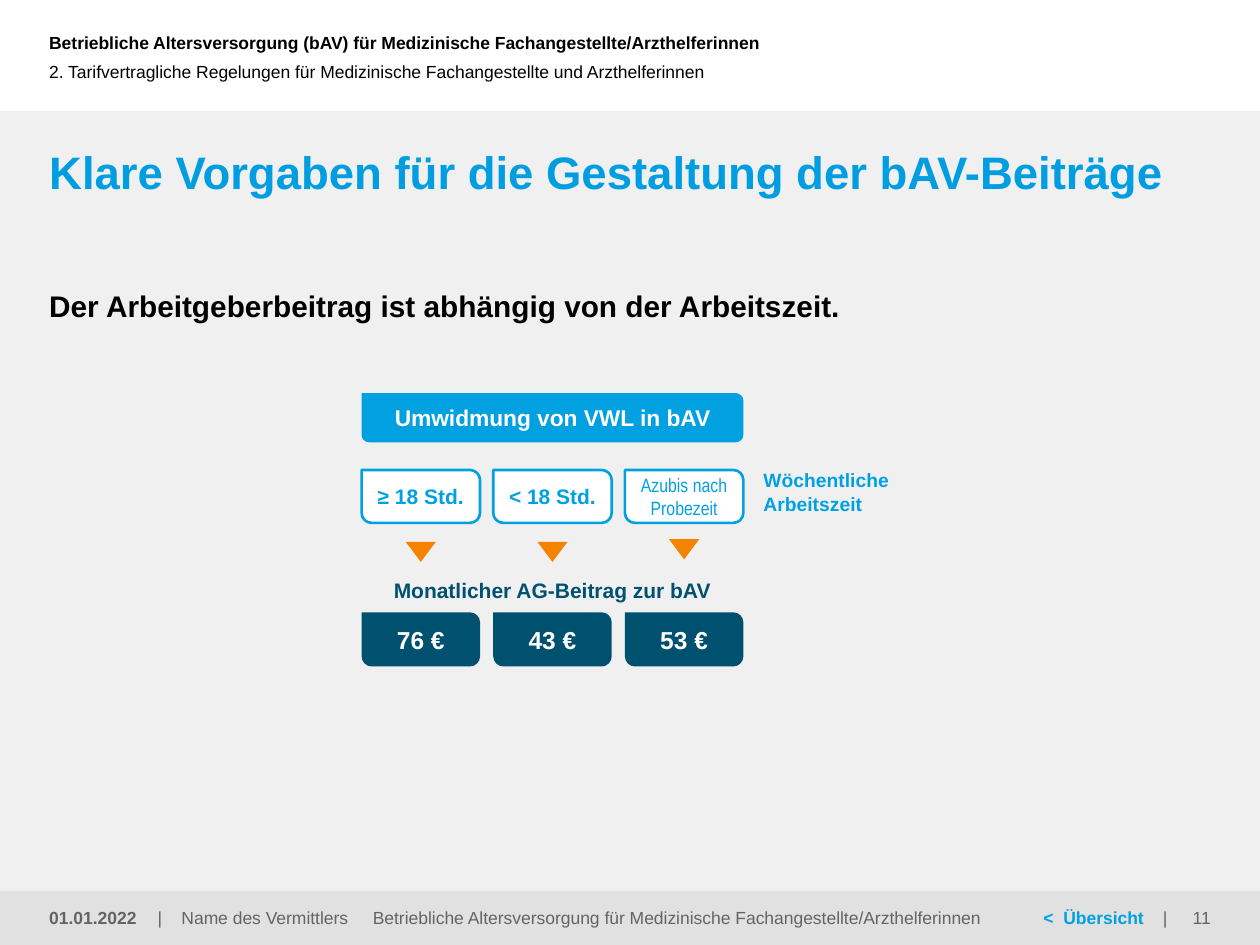
import lxml.etree
import pptx
import pptx.dml.color
import pptx.enum.shapes
import pptx.enum.text
import pptx.oxml.ns
import pptx.util
from pptx.util import Inches

RGBColor = pptx.dml.color.RGBColor
Align = pptx.enum.text.PP_ALIGN
Anchor = pptx.enum.text.MSO_ANCHOR
Preset = pptx.enum.shapes.MSO_SHAPE
qn = pptx.oxml.ns.qn

WHITE = RGBColor(0xFF, 0xFF, 0xFF)
BLACK = RGBColor(0x00, 0x00, 0x00)
BLUE = RGBColor(0x00, 0xA0, 0xE1)
TITLE_BLUE = RGBColor(0x00, 0x9E, 0xE0)
PETROL = RGBColor(0x00, 0x50, 0x70)
ORANGE = RGBColor(0xF5, 0x82, 0x00)
GRAY = RGBColor(0x64, 0x64, 0x64)
PANEL_GRAY = RGBColor(0xF0, 0xF0, 0xF0)
FOOTER_GRAY = RGBColor(0xE1, 0xE1, 0xE1)

MARGIN = 0.39
ARC_CONTROL = 0.55
COLUMNS = [
    ("≥ 18 Std.", {"size": 12, "bold": True}, 1.18, "76 €"),
    ("< 18 Std.", {"size": 12, "bold": True}, 1.18, "43 €"),
    ("Azubis nach Probezeit", {"size": 11, "font": "Arial Narrow"}, 1.16, "53 €"),
]


def write_text(shape, paragraphs, size=10, color=BLACK, bold=False, font="Arial",
               align=Align.LEFT, anchor=Anchor.TOP, wrap=True, tabs=(), insets=(0, 0, 0, 0)):
    frame = shape.text_frame
    frame.word_wrap = wrap
    frame.auto_size = pptx.enum.text.MSO_AUTO_SIZE.NONE
    frame.vertical_anchor = anchor
    (frame.margin_left, frame.margin_top,
     frame.margin_right, frame.margin_bottom) = map(Inches, insets)
    for index, runs in enumerate(paragraphs):
        paragraph = frame.add_paragraph() if index else frame.paragraphs[0]
        paragraph.alignment = align
        if tabs:
            properties = paragraph._p.get_or_add_pPr()
            tab_list = lxml.etree.SubElement(properties, qn("a:tabLst"))
            for position in tabs:
                lxml.etree.SubElement(tab_list, qn("a:tab"),
                                      pos=str(Inches(position)), algn="l")
        for text, changes in ([(runs, {})] if isinstance(runs, str) else runs):
            run = paragraph.add_run()
            run.text = text
            run.font.name = font
            run.font.size = pptx.util.Pt(size)
            run.font.bold = changes.get("bold", bold)
            run.font.color.rgb = changes.get("color", color)


def add_text(slide, box, *paragraphs, **text_format):
    shape = slide.shapes.add_textbox(*map(Inches, box))
    write_text(shape, paragraphs, **text_format)


def paint(shape, fill, line=None):
    shape.shadow.inherit = False
    shape.fill.solid()
    shape.fill.fore_color.rgb = fill
    if line is None:
        shape.line.fill.background()
    else:
        shape.line.color.rgb = line
        shape.line.width = pptx.util.Pt(1.5)


def add_preset(slide, preset, box, fill):
    paint(slide.shapes.add_shape(preset, *map(Inches, box)), fill)


def round_corner(segment, start, corner, end):
    segment.tag = qn("a:cubicBezTo")
    for child in list(segment):
        segment.remove(child)
    controls = [[point + ARC_CONTROL * (target - point) for point, target in zip(edge, corner)]
                for edge in (start, end)]
    for x, y in (*controls, end):
        lxml.etree.SubElement(segment, qn("a:pt"), x=str(Inches(x)), y=str(Inches(y)))


def add_label(slide, box, text, fill, line=None, radius=0.08, **text_format):
    left, top, width, height = box
    arcs = [
        ((width - radius, 0), (width, 0), (width, radius)),
        ((width, height - radius), (width, height), (width - radius, height)),
        ((radius, height), (0, height), (0, height - radius)),
    ]
    points = [(Inches(left + x), Inches(top + y))
              for start, _, end in arcs for x, y in (start, end)]
    builder = slide.shapes.build_freeform(Inches(left), Inches(top))
    builder.add_line_segments(points, close=True)
    shape = builder.convert_to_shape()
    segments = list(shape._element.iter(qn("a:lnTo")))
    for segment, arc in zip(segments[1::2], arcs):
        round_corner(segment, *arc)
    paint(shape, fill, line)
    write_text(shape, [text], align=Align.CENTER, anchor=Anchor.MIDDLE, **text_format)


def add_header(slide, box):
    left, top, width, height = box
    add_text(slide, (left, top, 6.98, 0.67),
             "Betriebliche Altersversorgung (bAV) für Medizinische "
             "Fachangestellte/Arzthelferinnen", bold=True, anchor=Anchor.MIDDLE,
             insets=(MARGIN, 0.05, 0.1, 0.05))
    add_text(slide, (left, top + 0.25, width, height - 0.25),
             "2. Tarifvertragliche Regelungen für Medizinische Fachangestellte "
             "und Arzthelferinnen", anchor=Anchor.MIDDLE, insets=(MARGIN, 0, 0, 0))


def add_footer(slide, box):
    left, top, width, height = box
    add_preset(slide, Preset.RECTANGLE, box, FOOTER_GRAY)
    row = {"color": GRAY, "anchor": Anchor.MIDDLE}
    add_text(slide, (left + 1.25, top, 2.42, height), "|\tName des Vermittlers",
             tabs=[0.19], **row)
    add_text(slide, (left + 6.88, top, 2.42, height),
             [("<\tÜbersicht", {"color": BLUE, "bold": True}), ("\t|", {})],
             tabs=[0.16, 0.95], insets=(1.4, 0, 0, 0), **row)
    add_text(slide, (left, top, 1.22, height), "01.01.2022", bold=True,
             insets=(MARGIN, 0.05, 0.1, 0.05), **row)
    add_text(slide, (left + 2.77, top, 5.2, height),
             "Betriebliche Altersversorgung für Medizinische "
             "Fachangestellte/Arzthelferinnen", align=Align.CENTER, **row)
    add_text(slide, (left + width - 0.94, top, 0.94, height), "11",
             align=Align.RIGHT, insets=(0.1, 0.05, MARGIN, 0.05), **row)


def add_title(slide, box):
    title = slide.shapes.title
    slide.shapes._spTree.append(title._element)
    title.left, title.top, title.width, title.height = map(Inches, box)
    write_text(title, ["Klare Vorgaben für die Gestaltung der bAV-Beiträge"],
               size=26, color=TITLE_BLUE, bold=True)


def add_contribution_diagram(slide, box):
    left, top, width, height = box
    label_width, arrow_width = 0.94, 0.24
    pitch = (width - label_width) / (len(COLUMNS) - 1)
    add_label(slide, (left, top, width, 0.39), "Umwidmung von VWL in bAV", BLUE,
              radius=0.06, size=13, color=WHITE, bold=True)
    add_text(slide, (left, top + 1.46, width, 0.2), "Monatlicher AG-Beitrag zur bAV",
             size=12, color=PETROL, bold=True, align=Align.CENTER)
    for index, (hours, hours_format, arrow_offset, amount) in enumerate(COLUMNS):
        column = left + index * pitch
        add_label(slide, (column, top + 0.61, label_width, 0.42), hours, WHITE,
                  line=BLUE, color=BLUE, **hours_format)
        add_preset(slide, Preset.FLOWCHART_MERGE,
                   (column + (label_width - arrow_width) / 2, top + arrow_offset,
                    arrow_width, 0.16), ORANGE)
        add_label(slide, (column, top + height - 0.43, label_width, 0.43), amount, PETROL,
                  size=14, color=WHITE, bold=True)
    add_text(slide, (left + width + 0.16, top + 0.6, 1.04, 0.37),
             "Wöchentliche", "Arbeitszeit", size=11, color=BLUE, bold=True, wrap=False)


def main():
    presentation = pptx.Presentation()
    presentation.slide_width, presentation.slide_height = Inches(10), Inches(7.5)
    slide = presentation.slides.add_slide(presentation.slide_layouts.get_by_name("Title Only"))
    add_preset(slide, Preset.RECTANGLE, (0, 0.88, 10, 6.62), PANEL_GRAY)
    add_header(slide, (0, 0, 7.15, 0.88))
    add_title(slide, (MARGIN, 1.14, 9.22, 0.55))
    add_text(slide, (MARGIN, 2.28, 9.22, 0.29),
             "Der Arbeitgeberbeitrag ist abhängig von der Arbeitszeit.", size=17, bold=True)
    add_contribution_diagram(slide, (2.87, 3.12, 3.03, 2.17))
    add_footer(slide, (0, 7.07, 10, 0.43))
    presentation.save("out.pptx")


if __name__ == "__main__":
    main()
